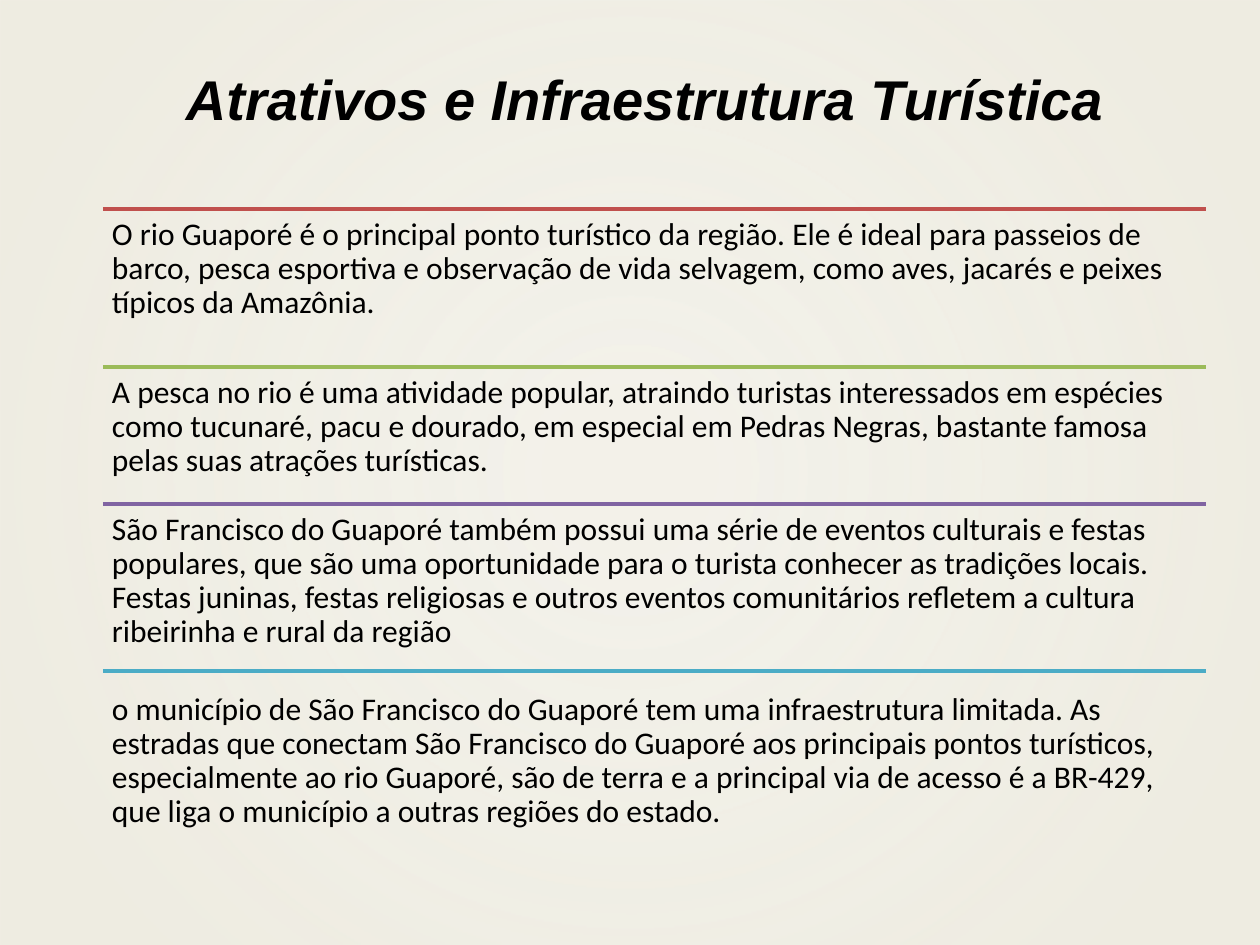
import pptx
import pptx.dml.color
import pptx.enum.shapes
import pptx.enum.text
import pptx.oxml
import pptx.oxml.ns
import pptx.util
from lxml import etree

EMU_PER_PX = 914400 / 126
LEFT, WIDTH = 103, 1103
INSET = 9

# Rule top, text top, text height, rule colour, text
SECTIONS = [
    (209, 209, 159, "C0504D",
     "O rio Guaporé é o principal ponto turístico da região. Ele é ideal para passeios de "
     "barco, pesca esportiva e observação de vida selvagem, como aves, jacarés e peixes "
     "típicos da Amazônia."),
    (367, 367, 136, "9BBB59",
     "A pesca no rio é uma atividade popular, atraindo turistas interessados em espécies "
     "como tucunaré, pacu e dourado, em especial em Pedras Negras, bastante famosa "
     "pelas suas atrações turísticas."),
    (504, 504, 168, "8064A2",
     "São Francisco do Guaporé também possui uma série de eventos culturais e festas "
     "populares, que são uma oportunidade para o turista conhecer as tradições locais. "
     "Festas juninas, festas religiosas e outros eventos comunitários refletem a cultura "
     "ribeirinha e rural da região"),
    (671, 684, 192, "4BACC6",
     "o município de São Francisco do Guaporé tem uma infraestrutura limitada. As "
     "estradas que conectam São Francisco do Guaporé aos principais pontos turísticos, "
     "especialmente ao rio Guaporé, são de terra e a principal via de acesso é a BR-429, "
     "que liga o município a outras regiões do estado."),
]


def px(length):
    return pptx.util.Emu(round(length * EMU_PER_PX))


def colour(value):
    return pptx.dml.color.RGBColor.from_string(value)


def add_backdrop(slide, width, height):
    """Full-slide rectangle with a translucent radial gradient."""
    shape = slide.shapes.add_shape(
        pptx.enum.shapes.MSO_SHAPE.RECTANGLE, 0, 0, width, height)
    shape.shadow.inherit = False
    shape.line.fill.background()
    shape.fill.gradient()
    gradient = shape.fill._xPr.find(pptx.oxml.ns.qn("a:gradFill"))
    stops = "".join(
        f'<a:gs pos="{position * 1000}"><a:srgbClr val="EEECE1">'
        f'<a:alpha val="{alpha * 1000}"/></a:srgbClr></a:gs>'
        for position, alpha in ((10, 68), (85, 97)))
    gradient.getparent().replace(gradient, pptx.oxml.parse_xml(
        f'<a:gradFill {pptx.oxml.ns.nsdecls("a")} rotWithShape="1"><a:gsLst>{stops}</a:gsLst>'
        '<a:path path="circle"><a:fillToRect l="50000" t="50000" r="50000" b="50000"/>'
        '</a:path></a:gradFill>'))


def add_text(shapes, box, text, font_name, size):
    """Wrapped text box; returns its frame, paragraph and run."""
    frame = shapes.add_textbox(*map(px, box)).text_frame
    frame.word_wrap = True
    paragraph = frame.paragraphs[0]
    run = paragraph.add_run()
    run.text = text
    run.font.name = font_name
    run.font.size = pptx.util.Pt(size)
    run.font.color.rgb = colour("000000")
    return frame, paragraph, run


def add_title(slide, text):
    frame, paragraph, run = add_text(slide.shapes, (42, 76, 1206, 44), text, "Arial", 32)
    frame.vertical_anchor = pptx.enum.text.MSO_ANCHOR.MIDDLE
    paragraph.alignment = pptx.enum.text.PP_ALIGN.CENTER
    run.font.bold = run.font.italic = True


def add_rule(shapes, top, line_colour):
    rule = shapes.add_connector(
        pptx.enum.shapes.MSO_CONNECTOR.STRAIGHT,
        px(LEFT), px(top), px(LEFT + WIDTH), px(top))
    rule.line.color.rgb = colour(line_colour)
    rule.line.width = pptx.util.Pt(2)
    etree.SubElement(rule._element.spPr, pptx.oxml.ns.qn("a:effectLst"))


def add_body(shapes, top, height, text):
    frame, paragraph, _ = add_text(shapes, (LEFT, top, WIDTH, height), text, "Calibri", 18)
    frame.margin_left = frame.margin_right = px(INSET)
    frame.margin_top = frame.margin_bottom = px(INSET)
    paragraph.line_spacing = 0.9


def main():
    presentation = pptx.Presentation()
    presentation.slide_width, presentation.slide_height = px(1260), px(945)
    slide = presentation.slides.add_slide(presentation.slide_layouts[6])

    # Backdrop and title
    add_backdrop(slide, presentation.slide_width, presentation.slide_height)
    add_title(slide, "Atrativos e Infraestrutura Turística")

    # Ruled list of sections
    group = slide.shapes.add_group_shape()
    for rule_top, text_top, height, line_colour, text in SECTIONS:
        add_rule(group.shapes, rule_top, line_colour)
        add_body(group.shapes, text_top, height, text)

    presentation.save("out.pptx")


if __name__ == "__main__":
    main()
